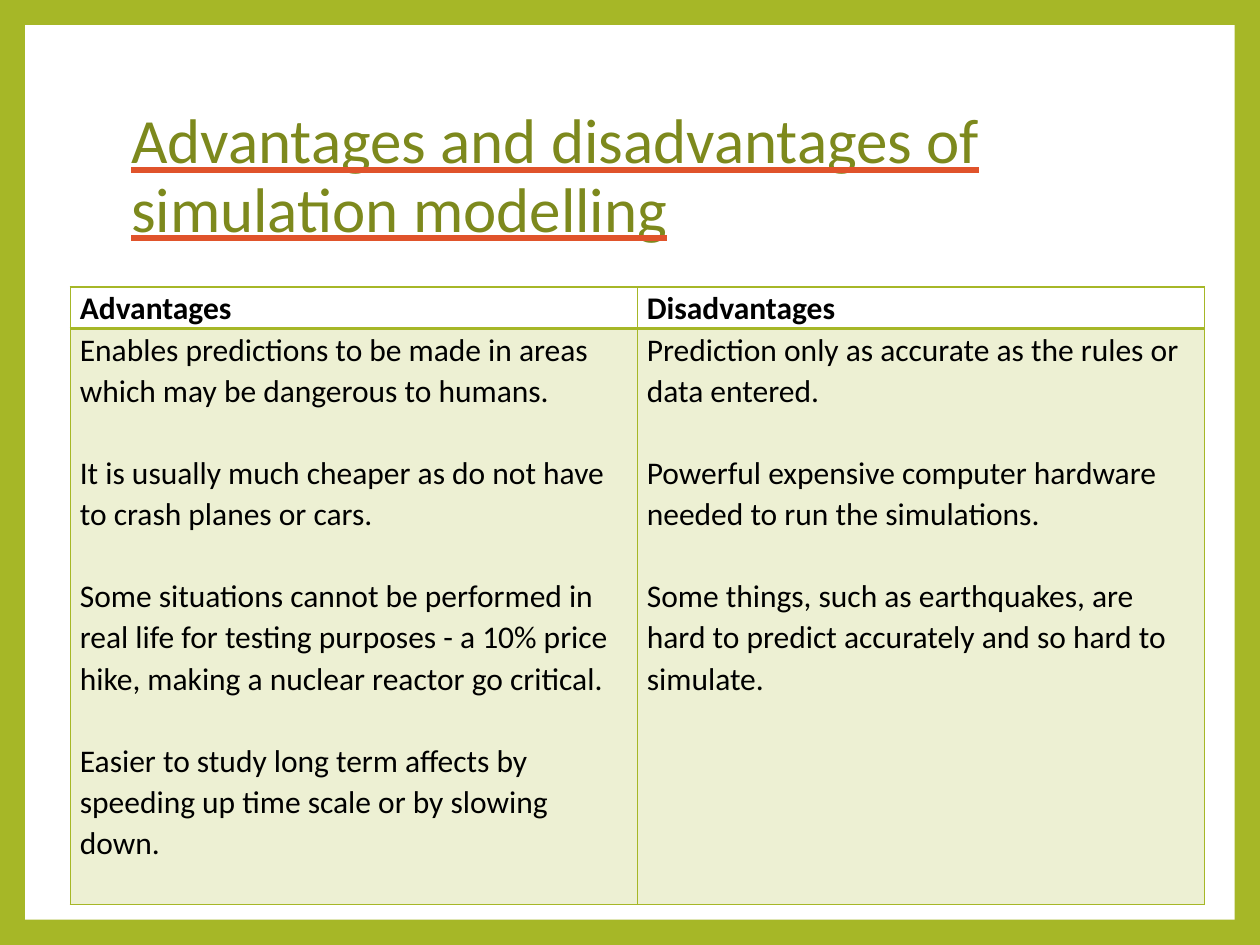
from lxml import etree
from pptx import Presentation
from pptx.dml.color import RGBColor
from pptx.enum.shapes import MSO_SHAPE
from pptx.enum.text import MSO_ANCHOR, MSO_AUTO_SIZE, PP_ALIGN
from pptx.oxml import parse_xml
from pptx.oxml.ns import nsdecls, qn
from pptx.util import Cm, Pt

RECTANGLE = MSO_SHAPE.RECTANGLE
LEFT, MIDDLE, TOP = PP_ALIGN.LEFT, MSO_ANCHOR.MIDDLE, MSO_ANCHOR.TOP
NO_AUTOFIT = MSO_AUTO_SIZE.NONE

GREEN = RGBColor(0xA6, 0xB7, 0x27)
OLIVE = RGBColor(0x7D, 0x89, 0x1D)
ORANGE = RGBColor(0xE0, 0x53, 0x2B)
WHITE = RGBColor(0xFF, 0xFF, 0xFF)
BLACK = RGBColor(0, 0, 0)

TITLE = "Advantages and disadvantages of simulation modelling"
COLUMNS = {
    "Advantages": [
        "Enables predictions to be made in areas which may be dangerous to humans.",
        "It is usually much cheaper as do not have to crash planes or cars.",
        "Some situations cannot be performed in real life for testing purposes - "
        "a 10% price hike, making a nuclear reactor go critical.",
        "Easier to study long term affects by speeding up time scale or by slowing down.",
    ],
    "Disadvantages": [
        "Prediction only as accurate as the rules or data entered.",
        "Powerful expensive computer hardware needed to run the simulations.",
        "Some things, such as earthquakes, are hard to predict accurately "
        "and so hard to simulate.",
    ],
}

SLIDE_W, SLIDE_H, FRAME = 25.4, 19.05, 0.51
TABLE_X, TABLE_Y, COLUMN_W = 1.42, 5.79, 11.43
ROW_HEIGHTS = (0.83, 11.61)
PARAGRAPH_GAP = Pt(23.5)

TITLE_FONT = {"name": "Calibri", "size": Pt(36), "underline": True}
CELL_FONT = {"name": "Calibri", "size": Pt(18)}
CELL_FORMAT = {"margin_left": Cm(0.19), "margin_right": Cm(0.19),
               "margin_top": 0, "margin_bottom": 0, "vertical_anchor": TOP}


def apply(target, values):
    for name, value in values.items():
        setattr(target, name, value)


def set_borders(cell, widths):
    """Draw the cell's borders; widths are points for left, right, top, bottom."""
    tcPr = cell._tc.get_or_add_tcPr()
    for i, (side, width) in enumerate(zip("LRTB", widths)):
        tcPr.insert(i, parse_xml(
            f'<a:ln{side} {nsdecls("a")} w="{Pt(width)}"><a:solidFill>'
            f'<a:srgbClr val="{GREEN}"/></a:solidFill></a:ln{side}>'))


def fill_cell(cell, paragraphs, bold):
    apply(cell, CELL_FORMAT)
    tf = cell.text_frame
    for i, text in enumerate(paragraphs):
        p = tf.paragraphs[0] if i == 0 else tf.add_paragraph()
        p.line_spacing = 1.07
        if i:
            p.space_before = PARAGRAPH_GAP
        r = p.add_run()
        r.text = text
        apply(r.font, {**CELL_FONT, "bold": bold})
        r.font.color.rgb = BLACK


def add_panel(s):
    sp = s.shapes.add_shape(RECTANGLE, Cm(FRAME), Cm(FRAME),
                            Cm(SLIDE_W - 2 * FRAME), Cm(SLIDE_H - 2 * FRAME))
    sp.shadow.inherit = False
    sp.fill.solid()
    sp.fill.fore_color.rgb = WHITE
    sp.line.fill.background()
    s.shapes._spTree.insert(2, sp._element)  # behind the title


def add_title(s):
    title = s.shapes.title
    apply(title, {"left": Cm(2.39), "top": Cm(1.7),
                  "width": Cm(20.57), "height": Cm(3.76)})
    tf = title.text_frame
    apply(tf, {"word_wrap": True, "auto_size": NO_AUTOFIT, "vertical_anchor": MIDDLE})
    p = tf.paragraphs[0]
    apply(p, {"alignment": LEFT, "line_spacing": 0.9})
    r = p.add_run()
    r.text = TITLE
    apply(r.font, TITLE_FONT)
    r.font.color.rgb = OLIVE
    underline = parse_xml(
        f'<a:uFill {nsdecls("a")}><a:solidFill><a:srgbClr val="{ORANGE}"/>'
        '</a:solidFill></a:uFill>')
    r.font._element.find(qn("a:latin")).addprevious(underline)


def add_comparison(s):
    table = s.shapes.add_table(2, len(COLUMNS), Cm(TABLE_X), Cm(TABLE_Y),
                               Cm(COLUMN_W * len(COLUMNS)), Cm(sum(ROW_HEIGHTS))).table
    for row, height in zip(table.rows, ROW_HEIGHTS):
        row.height = Cm(height)
    for col, (heading, points) in enumerate(COLUMNS.items()):
        table.columns[col].width = Cm(COLUMN_W)
        head, body = table.cell(0, col), table.cell(1, col)
        fill_cell(head, [heading], True)
        head.fill.background()
        set_borders(head, (1, 1, 1, 2))
        fill_cell(body, points, False)
        body.fill.solid()
        body.fill.fore_color.rgb = GREEN
        color = body._tc.tcPr.find(".//" + qn("a:srgbClr"))
        etree.SubElement(color, qn("a:alpha"), val="20000")
        set_borders(body, (1, 1, 2, 1))


def main():
    prs = Presentation()
    prs.slide_width, prs.slide_height = Cm(SLIDE_W), Cm(SLIDE_H)
    s = prs.slides.add_slide(prs.slide_layouts[5])
    s.background.fill.solid()
    s.background.fill.fore_color.rgb = GREEN
    add_panel(s)
    add_title(s)
    add_comparison(s)
    prs.save("out.pptx")


if __name__ == "__main__":
    main()
